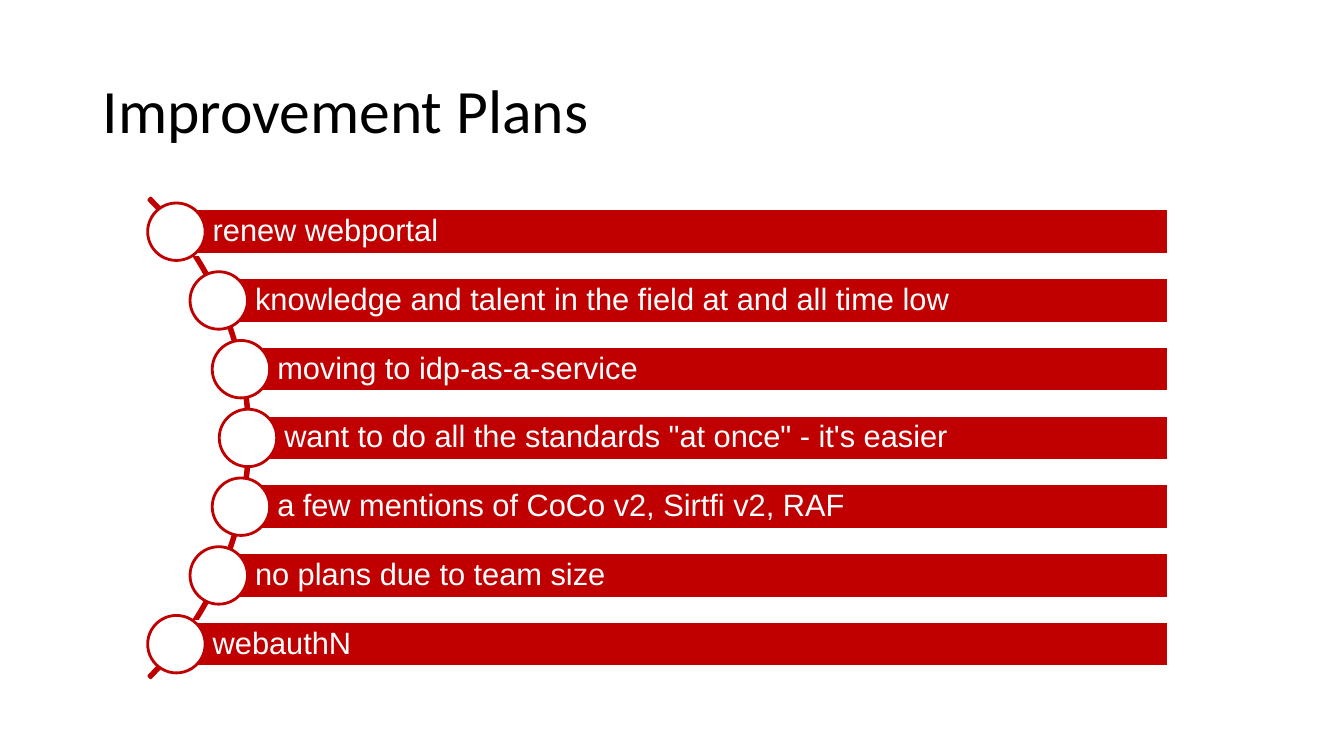
from pptx import Presentation
from pptx.dml.color import RGBColor
from pptx.enum.shapes import MSO_SHAPE as Shape
from pptx.enum.text import MSO_ANCHOR as Anchor, PP_ALIGN as Align
from pptx.util import Inches, Pt

TITLE = "Improvement Plans"
PLANS = [
    "renew webportal",
    "knowledge and talent in the field at and all time low",
    "moving to idp-as-a-service",
    "want to do all the standards \"at once\" - it's easier",
    "a few mentions of CoCo v2, Sirtfi v2, RAF",
    "no plans due to team size",
    "webauthN",
]
INDENTS = [0, 0.42, 0.64, 0.71]  # from the outermost row to the middle row

RED = RGBColor(0xC0, 0x00, 0x00)
WHITE = RGBColor(0xFF, 0xFF, 0xFF)
BLACK = RGBColor(0x00, 0x00, 0x00)

SLIDE_WIDTH, SLIDE_HEIGHT = 13.33, 7.5
CENTER_Y = 4.345
ROW_STEP = 0.682
BAR_LEFT, BAR_RIGHT, BAR_HEIGHT = 1.75, 11.585, 0.45
CIRCLE_SIZE = 0.57
ARC_LEFT, ARC_SIZE = -4.25, 6.73
ARC_ADJUSTMENTS = (189, 27, 0.004)  # start angle, end angle, thickness


def add_outlined(slide, preset, left, center_y, width, height, line, fill=None):
    """Add a preset shape centred vertically on center_y."""
    shape = slide.shapes.add_shape(
        preset, Inches(left), Inches(center_y - height / 2), Inches(width), Inches(height)
    )
    shape.shadow.inherit = False
    shape.line.color.rgb = line
    shape.line.width = Pt(2)
    if fill is None:
        shape.fill.background()
    else:
        shape.fill.solid()
        shape.fill.fore_color.rgb = fill
    return shape


def write(shape, text, font, size, color, insets):
    frame = shape.text_frame
    frame.word_wrap = True
    frame.vertical_anchor = Anchor.MIDDLE
    frame.margin_left, frame.margin_top, frame.margin_right, frame.margin_bottom = map(Inches, insets)
    paragraph = frame.paragraphs[0]
    paragraph.alignment = Align.LEFT
    paragraph.line_spacing = 0.9
    run = paragraph.add_run()
    run.text = text
    run.font.name = font
    run.font.size = Pt(size)
    run.font.color.rgb = color


def add_plan(slide, row, text):
    last = len(PLANS) - 1
    left = BAR_LEFT + INDENTS[min(row, last - row)]
    center_y = CENTER_Y + (row - last / 2) * ROW_STEP
    bar = add_outlined(
        slide, Shape.RECTANGLE, left, center_y, BAR_RIGHT - left, BAR_HEIGHT, WHITE, RED
    )
    write(bar, text, "Arial", 22, WHITE, (0.36, 0.06, 0.06, 0.06))
    add_outlined(
        slide, Shape.OVAL, left - CIRCLE_SIZE / 2, center_y, CIRCLE_SIZE, CIRCLE_SIZE, RED, WHITE
    )


def main():
    presentation = Presentation()
    presentation.slide_width = Inches(SLIDE_WIDTH)
    presentation.slide_height = Inches(SLIDE_HEIGHT)
    slide = presentation.slides.add_slide(presentation.slide_layouts[6])

    title = slide.shapes.add_textbox(Inches(0.92), Inches(0.4), Inches(11.5), Inches(1.45))
    write(title, TITLE, "Calibri", 44, BLACK, (0.1, 0.05, 0.1, 0.05))

    arc = add_outlined(slide, Shape.BLOCK_ARC, ARC_LEFT, CENTER_Y, ARC_SIZE, ARC_SIZE, RED)
    for index, value in enumerate(ARC_ADJUSTMENTS):
        arc.adjustments[index] = value

    for row, text in enumerate(PLANS):
        add_plan(slide, row, text)

    presentation.save("out.pptx")


if __name__ == "__main__":
    main()
